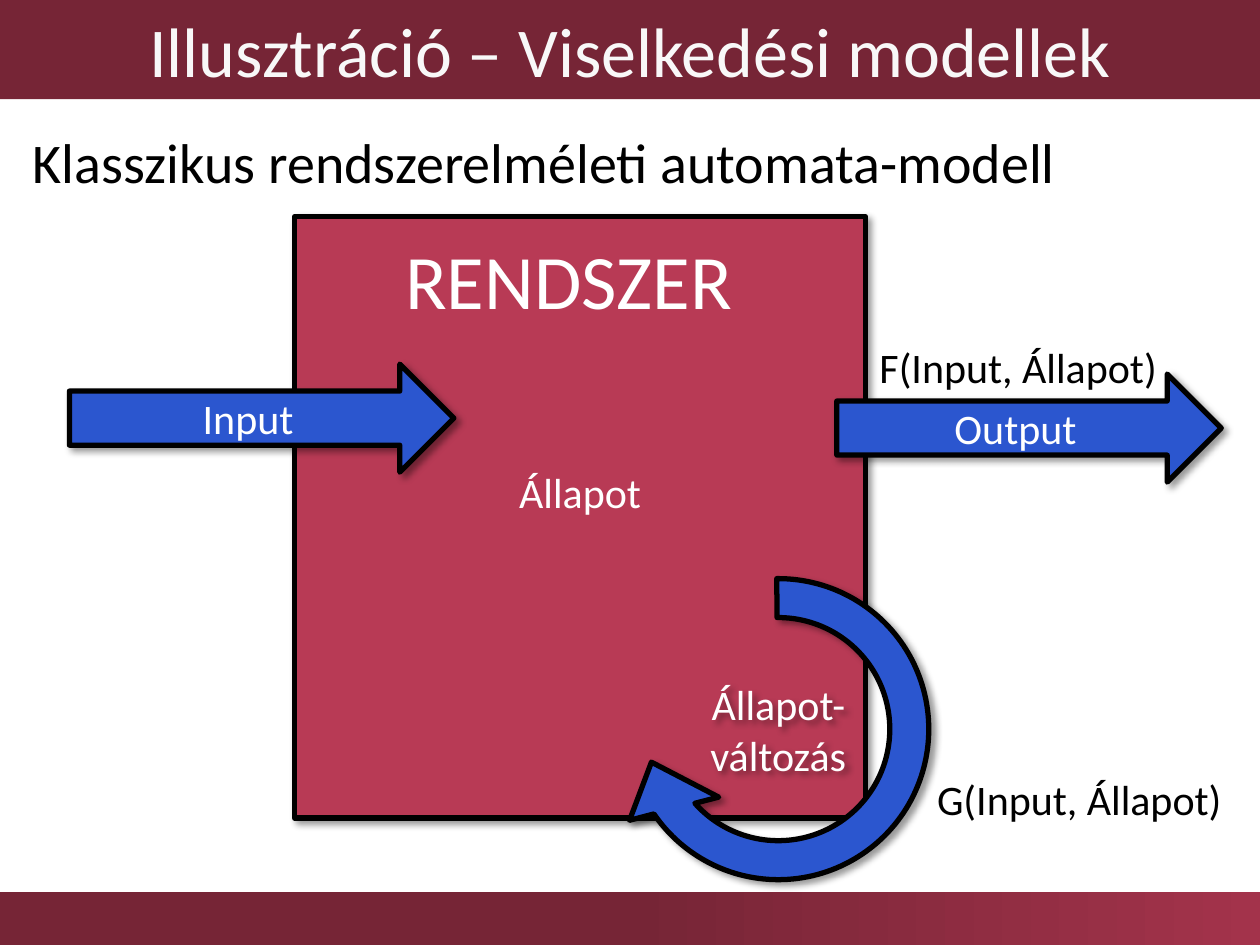
import pptx
import pptx.dml.color
import pptx.enum.shapes
import pptx.enum.text
import pptx.oxml
import pptx.oxml.ns
import pptx.util
from pptx.util import Cm

SHAPE = pptx.enum.shapes.MSO_SHAPE
ALIGN = pptx.enum.text.PP_ALIGN
ANCHOR = pptx.enum.text.MSO_ANCHOR
SHADOW = (
    f'<a:outerShdw {pptx.oxml.ns.nsdecls("a")} blurRad="50800" dist="38100" dir="2700000" '
    'algn="tl" rotWithShape="0"><a:srgbClr val="000000"><a:alpha val="40000"/>'
    '</a:srgbClr></a:outerShdw>'
)


def color(value):
    return pptx.dml.color.RGBColor.from_string(value)


def write(shape, text, size=24, fill="FFFFFF", align=ALIGN.CENTER, anchor=ANCHOR.MIDDLE):
    frame = shape.text_frame
    frame.word_wrap = True
    frame.auto_size = pptx.enum.text.MSO_AUTO_SIZE.NONE
    frame.vertical_anchor = anchor
    paragraph = frame.paragraphs[0]
    paragraph.text = text
    paragraph.alignment = align
    paragraph.font.name = "Calibri"
    paragraph.font.size = pptx.util.Pt(size)
    paragraph.font.color.rgb = color(fill)


presentation = pptx.Presentation()
presentation.slide_width = Cm(25.4)
presentation.slide_height = Cm(19.05)
slide = presentation.slides.add_slide(presentation.slide_layouts[5])

# Title band
title = slide.shapes.title
title.left, title.top, title.width, title.height = Cm(0), Cm(0), Cm(25.4), Cm(2)
title.fill.solid()
title.fill.fore_color.rgb = color("762536")
write(title, "Illusztráció – Viselkedési modellek", size=40, fill="F8F8F8")

# Footer band: plain up to the middle, then lighter to the right
footer = slide.shapes.add_shape(SHAPE.RECTANGLE, Cm(0), Cm(17.98), Cm(25.4), Cm(1.07))
footer.shadow.inherit = False
footer.line.fill.background()
footer.fill.gradient()
footer.fill.gradient_angle = 0
for stop, position, value in zip(footer.fill.gradient_stops, (0.5, 1), ("762536", "A3334B")):
    stop.position = position
    stop.color.rgb = color(value)

# System box, input and output arrows, state change loop
blocks = [
    (SHAPE.RECTANGLE, "Állapot", "B83A55", 5.94, 4.37, 11.51, 12.12),
    (SHAPE.RIGHT_ARROW, "Input", "2B56CF", 1.4, 7.34, 7.75, 2.18),
    (SHAPE.RIGHT_ARROW, "Output", "2B56CF", 16.87, 7.54, 7.75, 2.18),
    (SHAPE.CIRCULAR_ARROW, "Állapot-változás", "2B56CF", 12.12, 11.13, 7.14, 7.14),
]
for kind, text, fill, left, top, width, height in blocks:
    shape = slide.shapes.add_shape(kind, Cm(left), Cm(top), Cm(width), Cm(height))
    shape.fill.solid()
    shape.fill.fore_color.rgb = color(fill)
    shape.line.color.rgb = color("000000")
    shape.line.width = pptx.util.Pt(3)
    shape.shadow.inherit = False
    effects = shape.element.spPr.find(pptx.oxml.ns.qn("a:effectLst"))
    effects.append(pptx.oxml.parse_xml(SHADOW))
    write(shape, text)
    if kind == SHAPE.RECTANGLE:
        # Lift the state label above the middle of the box
        shape.text_frame.margin_bottom = Cm(1.15)
    elif kind == SHAPE.CIRCULAR_ARROW:
        for index, value in enumerate((0.11, 13.68, 85.57, 161.65, 0.13)):
            shape.adjustments[index] = value

# Free text: subtitle, functions and the name of the system
labels = [
    ("Klasszikus rendszerelméleti automata-modell", 32, "000000", 0.41, 2.44, 24.61, 1.6),
    ("F(Input, Állapot)", 24, "000000", 17.48, 6.76, 6.35, 1.27),
    ("G(Input, Állapot)", 24, "000000", 18.64, 15.47, 6.35, 1.27),
    ("RENDSZER", 44, "FFFFFF", 7.92, 4.57, 7.95, 2.13),
]
for text, size, fill, left, top, width, height in labels:
    label = slide.shapes.add_textbox(Cm(left), Cm(top), Cm(width), Cm(height))
    write(label, text, size=size, fill=fill, align=ALIGN.LEFT, anchor=ANCHOR.TOP)

presentation.save("out.pptx")
